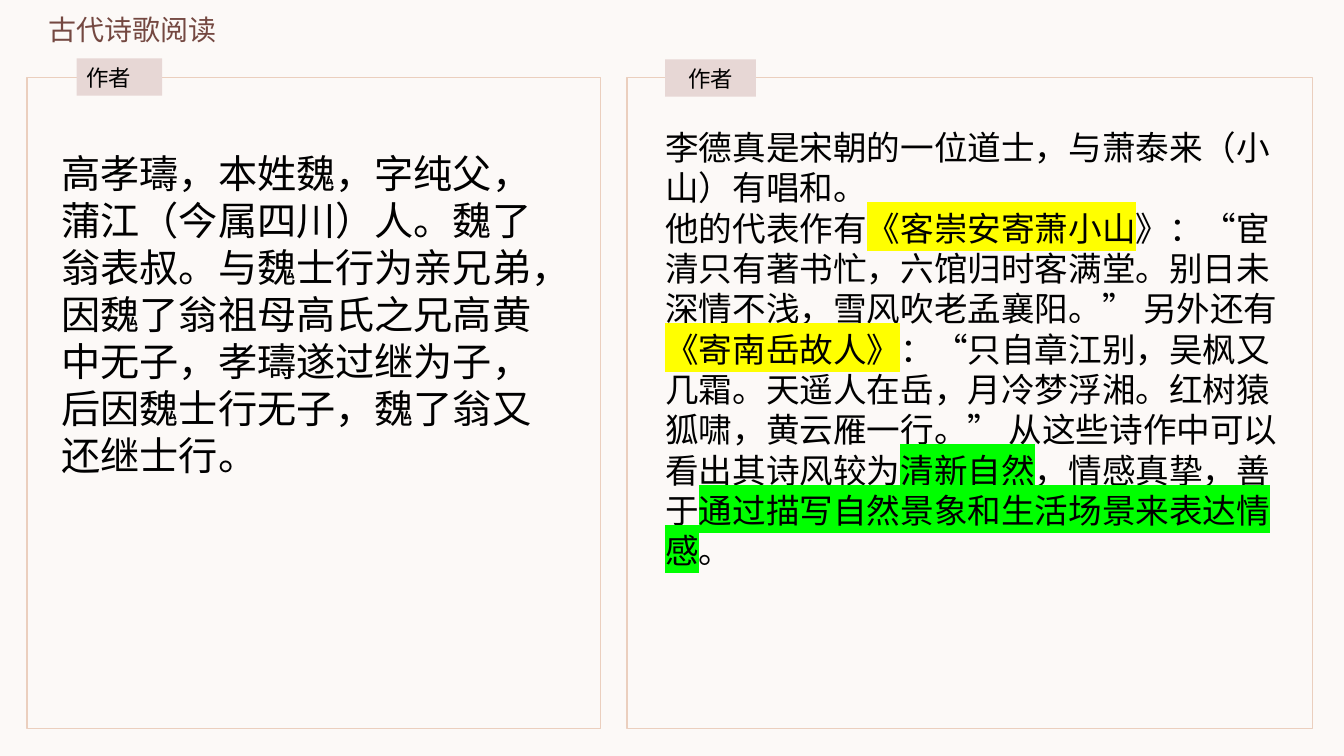
"""Build a slide introducing two poets of classical Chinese verse."""
from lxml.etree import SubElement
from pptx import Presentation
from pptx.dml.color import RGBColor
from pptx.enum.shapes import MSO_SHAPE as Preset
from pptx.enum.text import MSO_ANCHOR as Anchor, MSO_AUTO_SIZE as AutoSize, PP_ALIGN as Align
from pptx.oxml.ns import qn
from pptx.util import Pt

FONT = "Noto Sans CJK SC"
BLACK = RGBColor(0x00, 0x00, 0x00)
BROWN = RGBColor(0x74, 0x48, 0x41)
CREAM = RGBColor(0xFC, 0xF9, 0xF7)
PEACH = RGBColor(0xEB, 0xCF, 0xBE)
ROSE = RGBColor(0xE7, 0xD7, 0xD5)
YELLOW = RGBColor(0xFF, 0xFF, 0x00)
GREEN = RGBColor(0x00, 0xFF, 0x00)

TITLE = "古代诗歌阅读"
TITLE_BOX = (27.4, 5, 168.5, 31.7)
LABEL = "作者"
FRAME_TOP, FRAME_HEIGHT = 55.4, 465.1
LABEL_HEIGHT = 26.6

GAO = [[("高孝璹，本姓魏，字纯父，蒲江（今属四川）人。魏了翁表叔。与魏士行为亲兄弟，"
         "因魏了翁祖母高氏之兄高黄中无子，孝璹遂过继为子，后因魏士行无子，魏了翁又还继士行。", None)]]
LI = [
    [("李德真是宋朝的一位道士，与萧泰来（小山）有唱和。", None)],
    [
        ("他的代表作有", None),
        ("《客崇安寄萧小山", YELLOW),
        ("》：“宦清只有著书忙，六馆归时客满堂。别日未深情不浅，雪风吹老孟襄阳。” 另外还有", None),
        ("《寄南岳故人》", YELLOW),
        ("：“只自章江别，吴枫又几霜。天遥人在岳，月冷梦浮湘。红树猿狐啸，黄云雁一行。”"
         " 从这些诗作中可以看出其诗风较为", None),
        ("清新自然", GREEN),
        ("，情感真挚，善于", None),
        ("通过描写自然景象和生活场景来表达情感", GREEN),
        ("。", None),
    ],
]
PANELS = [
    {"frame": (19.4, 409.7), "label": (54.7, 41.8, 61.2), "align": Align.LEFT,
     "body": (36.7, 103, 375.8, 295.9), "size": 28, "text": GAO},
    {"frame": (447.8, 489.6), "label": (475.2, 42.5, 64.8), "align": Align.CENTER,
     "body": (468, 87.1, 452.2, 404.6), "size": 24, "text": LI},
]


def apply(target, values):
    for name, value in values.items():
        setattr(target, name, value)


def place(box, bounds):
    apply(box, dict(zip(("left", "top", "width", "height"), map(Pt, bounds))))


def add_span(para, text, size, color, highlight=None):
    span = para.add_run()
    span.text = text
    apply(span.font, {"size": Pt(size), "bold": False, "name": FONT})
    span.font.color.rgb = color
    props = span.font._element
    props.set("lang", "zh-CN")
    latin = props.find(qn("a:latin"))
    east_asian = SubElement(props, qn("a:ea"), typeface=FONT)
    latin.addnext(east_asian)
    if highlight is not None:
        marker = SubElement(props, qn("a:highlight"))
        SubElement(marker, qn("a:srgbClr"), val=str(highlight))
        latin.addprevious(marker)


def write(box, paragraphs, size, color=BLACK, align=Align.LEFT, anchor=Anchor.MIDDLE):
    frame = box.text_frame
    apply(frame, {"word_wrap": True, "auto_size": AutoSize.NONE, "vertical_anchor": anchor})
    for index, spans in enumerate(paragraphs):
        para = frame.add_paragraph() if index else frame.paragraphs[0]
        apply(para, {"alignment": align, "space_before": Pt(0), "line_spacing": Pt(size * 1.2)})
        props = para._p.get_or_add_pPr()
        props.set("marL", "0")
        props.set("indent", "0")
        SubElement(props, qn("a:buNone"))
        for text, highlight in spans:
            add_span(para, text, size, color, highlight)


def add_rectangle(page, bounds, fill=None, line=None):
    box = page.shapes.add_shape(Preset.RECTANGLE, *map(Pt, bounds))
    box.shadow.inherit = False
    if fill is None:
        box.fill.background()
    else:
        box.fill.solid()
        box.fill.fore_color.rgb = fill
    if line is None:
        box.line.fill.background()
    else:
        box.line.color.rgb = line
        box.line.width = Pt(1)
    return box


def main():
    deck = Presentation()
    apply(deck, {"slide_width": Pt(960), "slide_height": Pt(540)})
    page = deck.slides.add_slide(deck.slide_layouts.get_by_name("Two Content"))
    page.background.fill.solid()
    page.background.fill.fore_color.rgb = CREAM

    title, *bodies = list(page.placeholders)[:3]
    place(title, TITLE_BOX)
    write(title, [[(TITLE, None)]], 20, BROWN)

    for panel, body in zip(PANELS, bodies):
        left, width = panel["frame"]
        add_rectangle(page, (left, FRAME_TOP, width, FRAME_HEIGHT), line=PEACH)
        label = add_rectangle(page, (*panel["label"], LABEL_HEIGHT), fill=ROSE)
        write(label, [[(LABEL, None)]], 16, align=panel["align"])
        place(body, panel["body"])
        write(body, panel["text"], panel["size"], anchor=Anchor.TOP)

    deck.save("out.pptx")


if __name__ == "__main__":
    main()
